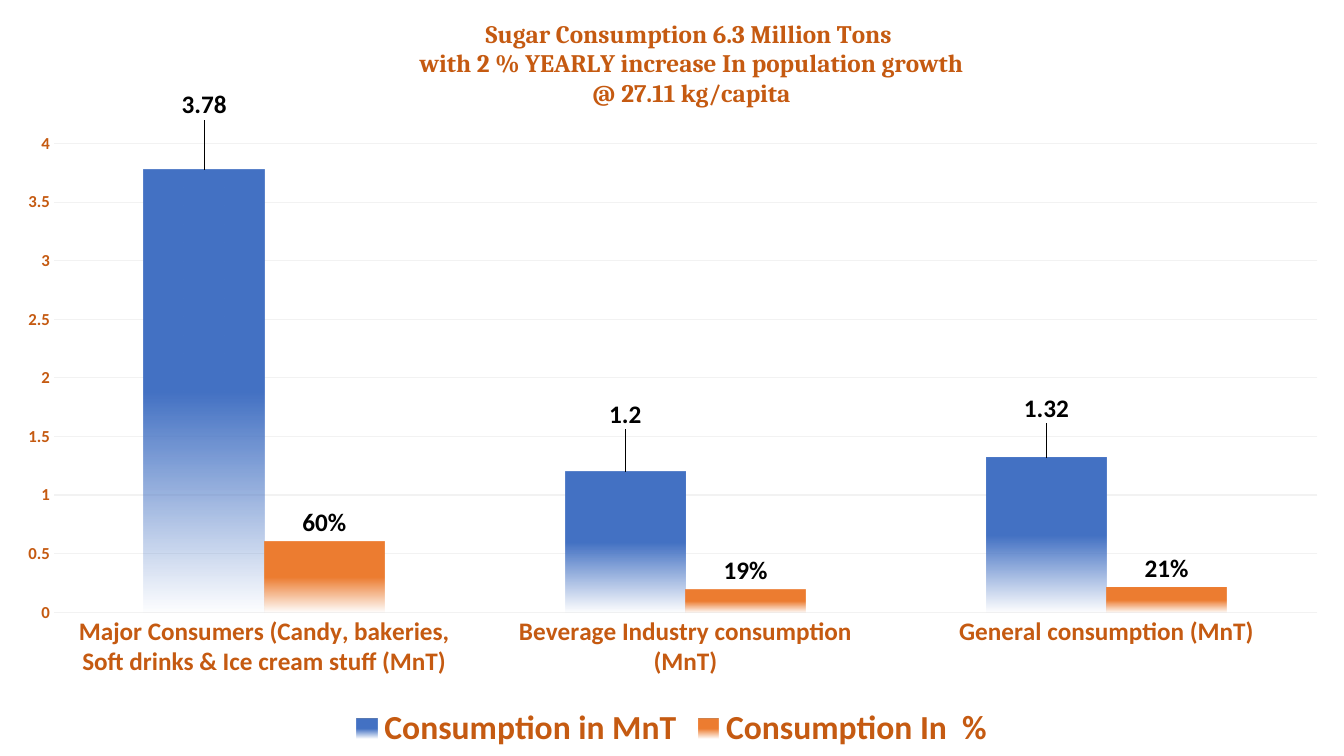
from lxml.etree import SubElement
from pptx import Presentation
from pptx.chart.data import CategoryChartData
from pptx.dml.color import RGBColor
from pptx.enum.chart import XL_CHART_TYPE, XL_LABEL_POSITION, XL_LEGEND_POSITION, XL_TICK_MARK
from pptx.oxml import parse_xml
from pptx.oxml.ns import nsdecls, qn
from pptx.util import Pt

COLORS = {"rust": "C55A11", "black": "000000", "grid": "F2F2F2",
          "blue": "4472C4", "orange": "ED7D31"}


def style(font, size, color, face="Calibri"):
    font.size = Pt(size)
    font.bold = True
    font.name = face
    font.color.rgb = RGBColor.from_string(COLORS[color])


def place(node, index, **parts):
    for old in node.findall(qn("c:layout")):
        node.remove(old)
    tags = "".join(f'<c:{tag} val="{val}"/>' for tag, val in parts.items())
    node.insert(index, parse_xml(
        f'<c:layout {nsdecls("c")}><c:manualLayout>{tags}</c:manualLayout></c:layout>'))


deck = Presentation()
deck.slide_width, deck.slide_height = Pt(960), Pt(540)
slide = deck.slides.add_slide(deck.slide_layouts[6])

data = CategoryChartData()
data.categories = ["Major Consumers (Candy, bakeries, Soft drinks & Ice cream stuff (MnT)",
                   "Beverage Industry consumption (MnT)", "General consumption (MnT)"]
data.add_series("Consumption in MnT", (3.78, 1.2, 1.32))
data.add_series("Consumption In  %", (0.6, 0.19, 0.21), "0%")
chart = slide.shapes.add_chart(XL_CHART_TYPE.COLUMN_CLUSTERED, 0, 0,
                               Pt(960), Pt(540), data).chart
chart.font.size = Pt(10)
chart.font.name = "Calibri"

title = chart.chart_title
title.text_frame.text = ("Sugar Consumption 6.3 Million Tons \n"
                         "with 2 % YEARLY increase In population growth\n"
                         "@ 27.11 kg/capita")
for line in title.text_frame.paragraphs:
    for run in line.runs:
        style(run.font, 18, "rust", "Cambria")
title.include_in_layout = False
place(title._element, 1, xMode="edge", yMode="edge", x=0.31, y=0.02)
place(chart._chartSpace.chart.plotArea, 0, layoutTarget="inner", xMode="edge",
      yMode="edge", x=0.04, y=0.19, w=0.94, h=0.62)

chart.has_legend = True
chart.legend.position = XL_LEGEND_POSITION.BOTTOM
chart.legend.include_in_layout = False
style(chart.legend.font, 24, "rust")

for axis, size in ((chart.category_axis, 18), (chart.value_axis, 12)):
    axis.major_tick_mark = axis.minor_tick_mark = XL_TICK_MARK.NONE
    axis.format.line.fill.background()
    style(axis.tick_labels.font, size, "rust")
scale = chart.value_axis
scale.minimum_scale, scale.maximum_scale, scale.major_unit = 0, 4, 0.5
scale.major_gridlines.format.line.width = Pt(0.75)
scale.major_gridlines.format.line.color.rgb = RGBColor.from_string(COLORS["grid"])

plot = chart.plots[0]
plot.gap_width = 150
plot.overlap = 0
plot.vary_by_categories = False
for series, color in zip(plot.series, ("blue", "orange")):
    fill = series.format.fill
    fill.gradient()
    fill.gradient_angle = 270
    for stop, spot in zip(fill.gradient_stops, (0.5, 1)):
        stop.position = spot
        stop.color.rgb = RGBColor.from_string(COLORS[color])
    clear = series._element.findall(".//" + qn("a:srgbClr"))[-1]
    SubElement(clear, qn("a:alpha")).set("val", "0")
    labels = series.data_labels
    labels.show_value = True
    labels.position = XL_LABEL_POSITION.OUTSIDE_END
    style(labels.font, 18, "black")
labels.number_format = "0%"
labels.number_format_is_linked = False

tons = plot.series[0]
for index, lift in enumerate((-0.06, -0.05, -0.04)):
    label = tons.points[index].data_label
    label.position = XL_LABEL_POSITION.OUTSIDE_END
    style(label.font, 18, "black")
for node, lift in zip(tons._element.findall(".//" + qn("c:dLbl")), (-0.06, -0.05, -0.04)):
    place(node, 1, x=0, y=lift)

deck.save("out.pptx")
